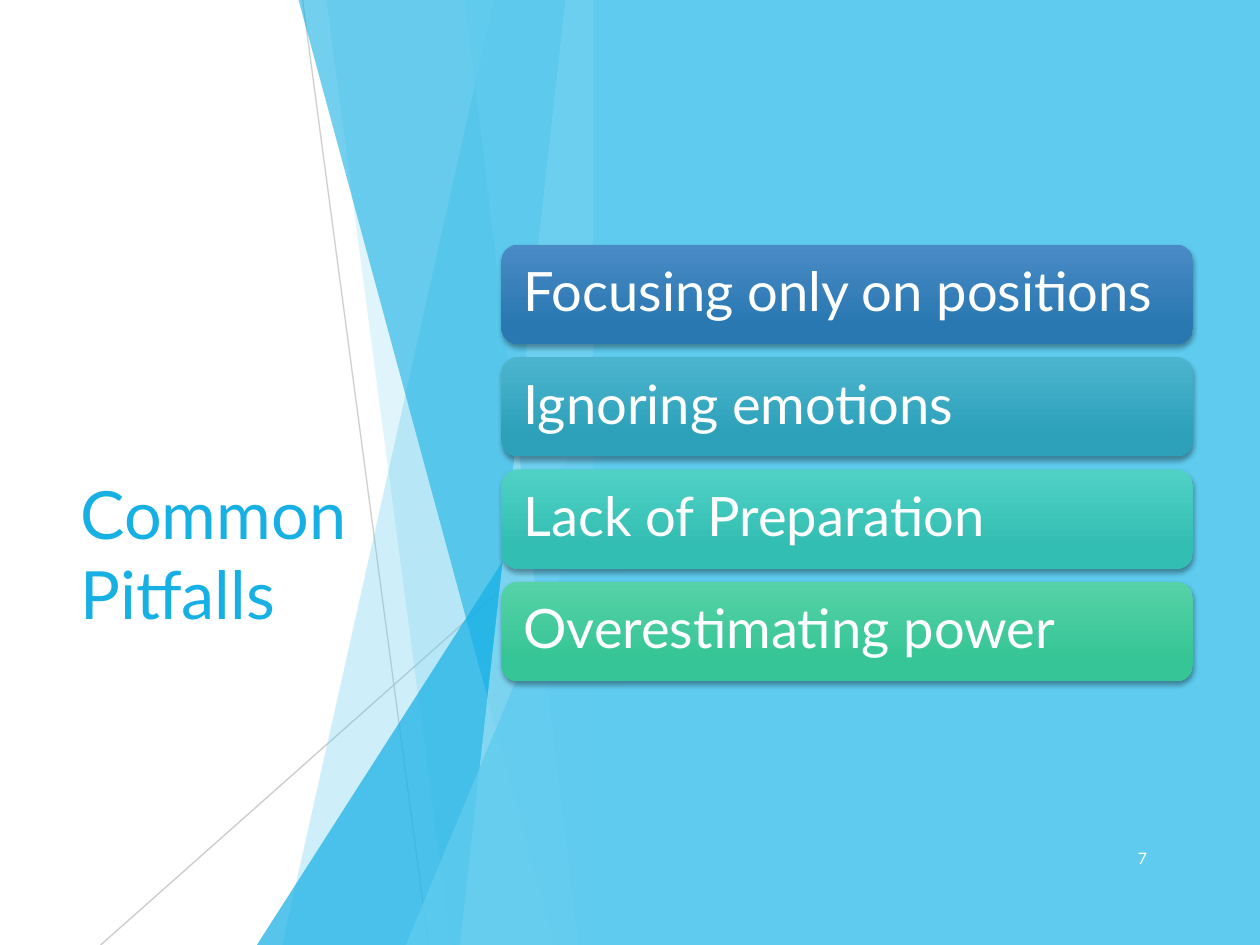
from lxml import etree
from pptx import Presentation
from pptx.dml.color import RGBColor
from pptx.enum import shapes, text
from pptx.oxml import ns
from pptx.util import Cm, Pt

WHITE = RGBColor(0xFF, 0xFF, 0xFF)
GREY = RGBColor(0xBF, 0xBF, 0xBF)
SKY = RGBColor(0x5F, 0xCB, 0xEF)
BLUE = RGBColor(0x17, 0xB0, 0xE4)
PALE = RGBColor(0x9F, 0xE0, 0xF5)
FONT = "Lato"

# Pitfall, gradient start, gradient end
PITFALLS = [
    ("Focusing only on positions", RGBColor(0x4A, 0x8B, 0xC6), RGBColor(0x2A, 0x78, 0xB2)),
    ("Ignoring emotions", RGBColor(0x4C, 0xB4, 0xCE), RGBColor(0x2D, 0xA1, 0xBA)),
    ("Lack of Preparation", RGBColor(0x50, 0xD1, 0xC6), RGBColor(0x33, 0xBE, 0xB3)),
    ("Overestimating power", RGBColor(0x56, 0xD2, 0xA7), RGBColor(0x36, 0xC5, 0x96)),
]


def set_opacity(part, percent):
    """Make the solid fill or line colour of a part partly transparent."""
    color = part._element.spPr.find(".//" + ns.qn("a:srgbClr"))
    etree.SubElement(color, ns.qn("a:alpha"), val=str(percent * 1000))


def paint(shape, color, opacity=100):
    shape.shadow.inherit = False
    shape.fill.solid()
    shape.fill.fore_color.rgb = color
    shape.line.fill.background()
    if opacity < 100:
        set_opacity(shape, opacity)


def add_run(paragraph, words, size, color):
    run = paragraph.add_run()
    run.text = words
    run.font.name = FONT
    run.font.size = Pt(size)
    run.font.color.rgb = color


def add_panel(slide, left, top, width, height, color):
    panel = slide.shapes.add_shape(
        shapes.MSO_SHAPE.RECTANGLE, Cm(left), Cm(top), Cm(width), Cm(height))
    paint(panel, color)


def add_ray(slide, left, top, start, end, opacity):
    ray = slide.shapes.add_connector(
        shapes.MSO_CONNECTOR.STRAIGHT, Cm(left + start[0]), Cm(top + start[1]),
        Cm(left + end[0]), Cm(top + end[1]))
    ray.line.color.rgb = GREY
    ray.line.width = Pt(0.75)
    set_opacity(ray, opacity)
    etree.SubElement(ray._element.spPr, ns.qn("a:effectLst"))


def add_facets(slide, left, top, width, height):
    """Overlapping translucent facets that all end at the box's right edge."""
    right, bottom = left + width, top + height

    def band(top_x, bottom_x, color, opacity):
        outline = slide.shapes.build_freeform(Cm(left + top_x), Cm(top), scale=1.0)
        outline.add_line_segments([
            (Cm(right), Cm(top)), (Cm(right), Cm(bottom)),
            (Cm(left + bottom_x), Cm(bottom))], close=True)
        paint(outline.convert_to_shape(), color, opacity)

    def wedge(x, y, color, opacity):
        triangle = slide.shapes.add_shape(
            shapes.MSO_SHAPE.ISOSCELES_TRIANGLE, Cm(left + x), Cm(top + y),
            Cm(width - x), Cm(height - y))
        triangle.adjustments[0] = 1
        paint(triangle, color, opacity)

    add_ray(slide, left, top, (6.1, 0), (8.64, height), 75)
    add_ray(slide, left, top, (width, 10.24), (2.03, height), 80)
    band(9.96, 5.69, SKY, 30)
    band(6.58, 9.09, SKY, 20)
    wedge(5.18, 8.46, BLUE, 72)
    band(6.02, 11.18, BLUE, 60)
    band(11.4, 9.27, PALE, 70)
    band(9.37, 11.66, SKY, 65)
    wedge(8.18, 9.98, SKY, 80)


def add_title(slide, left, top, width, height):
    title = slide.shapes.add_textbox(Cm(left), Cm(top), Cm(width), Cm(height))
    frame = title.text_frame
    frame.word_wrap = True
    frame.vertical_anchor = text.MSO_ANCHOR.MIDDLE
    frame.margin_top = Cm(3.35)  # sets the title in the lower half
    add_run(frame.paragraphs[0], "Common Pitfalls", 38, BLUE)


def add_page_number(slide, left, top, width, height):
    number = slide.shapes.add_textbox(Cm(left), Cm(top), Cm(width), Cm(height))
    frame = number.text_frame
    frame.word_wrap = True
    frame.vertical_anchor = text.MSO_ANCHOR.MIDDLE
    paragraph = frame.paragraphs[0]
    paragraph.alignment = text.PP_ALIGN.RIGHT
    paragraph.space_after = Pt(6)
    add_run(paragraph, "7", 9, WHITE)


def add_soft_shadow(shape):
    shape.shadow.inherit = False
    effects = shape._element.spPr.find(ns.qn("a:effectLst"))
    shadow = etree.SubElement(
        effects, ns.qn("a:outerShdw"), blurRad=str(Pt(3)), dist=str(Pt(2)),
        dir="5400000", rotWithShape="0")
    black = etree.SubElement(shadow, ns.qn("a:srgbClr"), val="000000")
    etree.SubElement(black, ns.qn("a:alpha"), val="35000")


def add_pitfall_list(slide, left, top, width, height, gap=0.26):
    bar_height = (height + gap) / len(PITFALLS) - gap
    for row, (pitfall, light, dark) in enumerate(PITFALLS):
        bar = slide.shapes.add_shape(
            shapes.MSO_SHAPE.ROUNDED_RECTANGLE, Cm(left),
            Cm(top + row * (bar_height + gap)), Cm(width), Cm(bar_height))
        bar.line.fill.background()
        bar.fill.gradient()
        bar.fill.gradient_angle = 270  # light at the top
        for stop, color, position in zip(bar.fill.gradient_stops, (light, dark), (0, 0.78)):
            stop.color.rgb = color
            stop.position = position
        add_soft_shadow(bar)

        frame = bar.text_frame
        frame.word_wrap = True
        frame.vertical_anchor = text.MSO_ANCHOR.MIDDLE
        frame.margin_left = frame.margin_right = Cm(0.35)
        paragraph = frame.paragraphs[0]
        paragraph.alignment = text.PP_ALIGN.LEFT
        paragraph.line_spacing = 0.9
        add_run(paragraph, pitfall, 31, WHITE)


def main():
    width, height, split = 25.4, 19.05, 11.96
    deck = Presentation()
    deck.slide_width, deck.slide_height = Cm(width), Cm(height)
    slide = deck.slides.add_slide(deck.slide_layouts[6])

    # Backdrop
    add_panel(slide, 0, 0, width, height, WHITE)
    add_facets(slide, 0, 0, split, height)
    # Title side
    add_title(slide, 1.37, 3.84, 7.39, 11.38)
    # List side
    add_panel(slide, split, 0, width - split, height, SKY)
    add_page_number(slide, 21.95, 16.79, 1.42, 1.02)
    add_pitfall_list(slide, 10.11, 4.93, 13.94, 8.8)

    deck.save("out.pptx")


if __name__ == "__main__":
    main()
